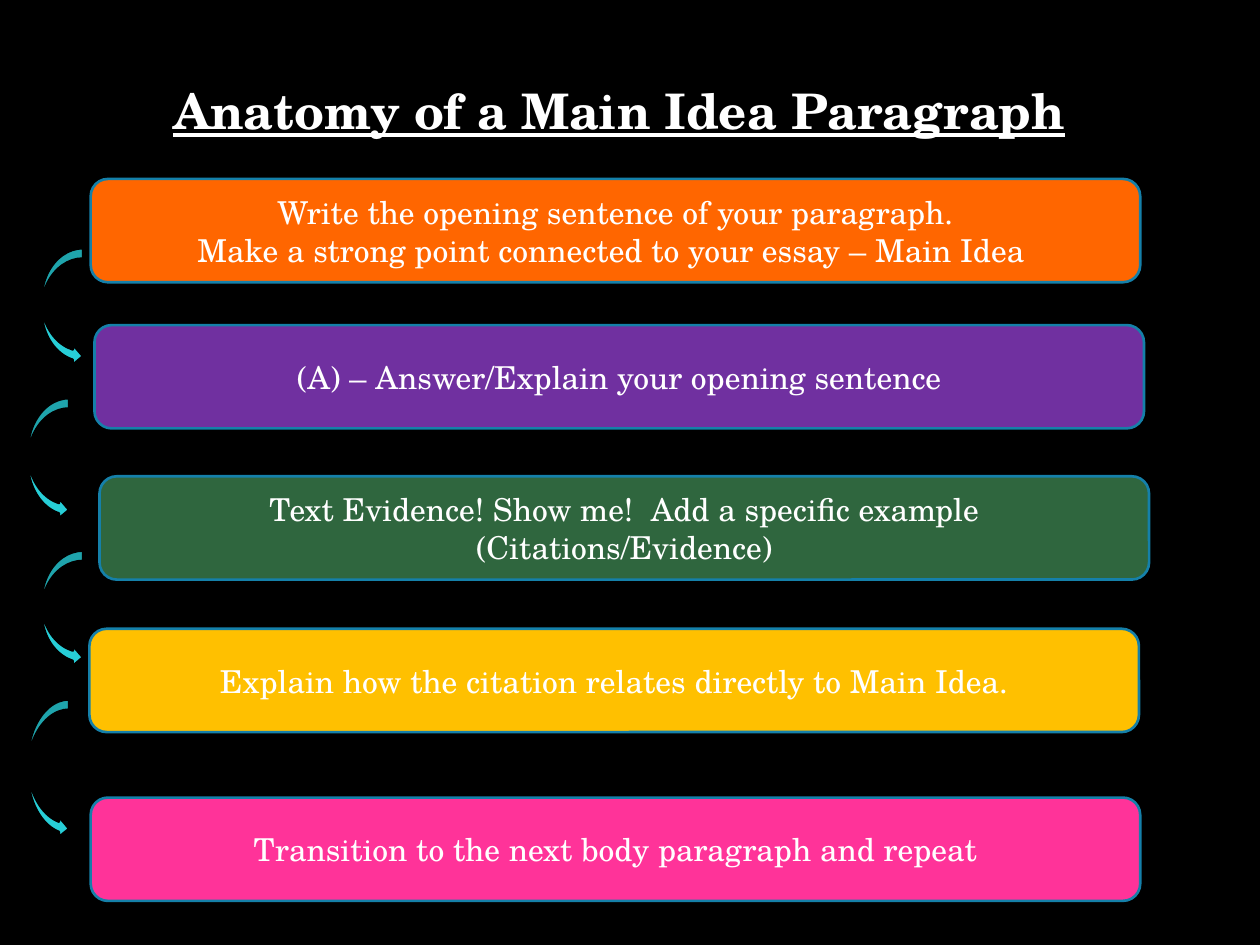
from pptx import Presentation
from pptx.dml.color import RGBColor
from pptx.enum.shapes import MSO_SHAPE as Shape
from pptx.enum.text import MSO_ANCHOR as Anchor, PP_ALIGN as Align
from pptx.util import Inches, Pt

FONT = "TeX Gyre Schola"
TITLE_FORMAT = {"name": FONT, "size": Pt(28), "bold": True, "underline": True}
STEP_FORMAT = {"name": FONT, "size": Pt(18), "bold": False}
STEP_SIZE = (8.33, 0.82)
STEPS = [
    (0.72, 1.42, "FF6600", ["Write the opening sentence of your paragraph.",
                            "Make a strong point connected to your essay – Main Idea "]),
    (0.75, 2.58, "7030A0", ["(A) – Answer/Explain your opening sentence"]),
    (0.79, 3.78, "2F663E", ["Text Evidence! Show me!  Add a specific example (Citations/Evidence)"]),
    (0.71, 4.99, "FFC000", ["Explain how the citation relates directly to Main Idea."]),
    (0.72, 6.33, "FF3399", ["Transition to the next body paragraph and repeat"]),
]
ARROW_WIDTH = 0.33
ARROWS = [(0.33, 1.97, 0.94), (0.22, 3.16, 0.97), (0.33, 4.37, 0.93), (0.22, 5.55, 1.11)]


def color(value):
    """Turn a hex string into a colour."""
    return RGBColor.from_string(value)


def write_text(shape, lines, font_format):
    """Write centred white paragraphs into a shape."""
    frame = shape.text_frame
    frame.word_wrap = True
    frame.vertical_anchor = Anchor.MIDDLE
    frame.text = "\n".join(lines)
    for paragraph in frame.paragraphs:
        paragraph.alignment = Align.CENTER
        font = paragraph.runs[0].font
        for name, value in font_format.items():
            setattr(font, name, value)
        font.color.rgb = color("FFFFFF")


def add_title(slide, box, text):
    """Add the underlined heading."""
    shape = slide.shapes.add_textbox(*map(Inches, box))
    write_text(shape, [text], TITLE_FORMAT)


def add_filled_shape(slide, kind, box, fill, line):
    """Add a flat preset shape with a fill and an outline."""
    shape = slide.shapes.add_shape(kind, *map(Inches, box))
    shape.shadow.inherit = False
    shape.fill.solid()
    shape.fill.fore_color.rgb = color(fill)
    shape.line.color.rgb = color(line)
    shape.line.width = Pt(1.5)
    return shape


def add_step(slide, box, fill, lines):
    """Add one paragraph step as a rounded bar."""
    shape = add_filled_shape(slide, Shape.ROUNDED_RECTANGLE, box, fill, "1580A9")
    write_text(shape, lines, STEP_FORMAT)


def add_step_arrow(slide, box):
    """Add a curved arrow that leads to the next step."""
    add_filled_shape(slide, Shape.CURVED_RIGHT_ARROW, box, "27CED7", "000000")


def main():
    """Build the slide and save it."""
    presentation = Presentation()
    presentation.slide_width, presentation.slide_height = Inches(10), Inches(7.5)
    slide = presentation.slides.add_slide(presentation.slide_layouts[6])
    slide.background.fill.solid()
    slide.background.fill.fore_color.rgb = color("000000")
    add_title(slide, (0.33, 0.25, 9.17, 1.25), "Anatomy of a Main Idea Paragraph")
    for left, top, fill, lines in STEPS:
        add_step(slide, (left, top, *STEP_SIZE), fill, lines)
    for left, top, height in ARROWS:
        add_step_arrow(slide, (left, top, ARROW_WIDTH, height))
    presentation.save("out.pptx")


if __name__ == "__main__":
    main()
